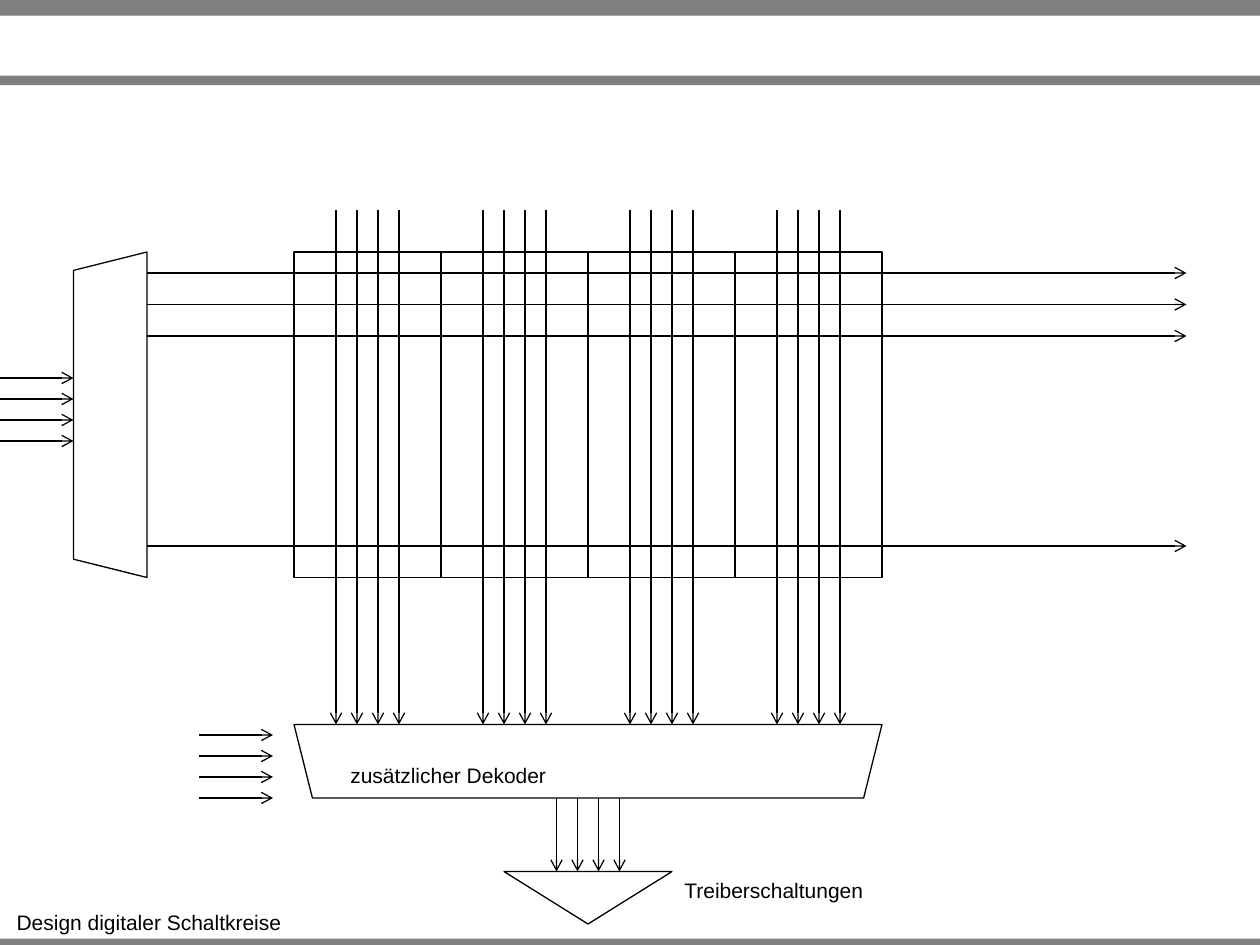
import pptx
import pptx.dml.color
import pptx.enum.shapes
import pptx.enum.text
import pptx.oxml.ns
import pptx.util
from lxml import etree
from pptx.util import Cm

COLORS = {"bar": "808080", "ink": "000000"}
SHAPES = pptx.enum.shapes.MSO_SHAPE
GRID = 2.54 / 12  # centimetres in one grid unit


def units(*values):
    """Turn grid units into lengths."""
    return [Cm(value * GRID) for value in values]


def color(name):
    return pptx.dml.color.RGBColor.from_string(COLORS[name])


class Diagram:
    """Draws on one slide; all positions are in grid units."""

    font_name = "Arial"
    font_size = pptx.util.Pt(12)
    line_width = pptx.util.Pt(0.75)

    def __init__(self, slide):
        self.slide = slide

    def bar(self, top, height):
        shape = self.slide.shapes.add_shape(SHAPES.RECTANGLE, *units(0, top, 120, height))
        shape.shadow.inherit = False
        shape.fill.solid()
        shape.fill.fore_color.rgb = color("bar")
        shape.line.fill.background()

    def outline(self, kind, left, top, width, height, rotation=0):
        shape = self.slide.shapes.add_shape(kind, *units(left, top, width, height))
        shape.shadow.inherit = False
        shape.rotation = rotation
        shape.fill.background()
        shape.line.color.rgb = color("ink")
        shape.line.width = self.line_width

    def arrow(self, x1, y1, x2, y2):
        connector = self.slide.shapes.add_connector(
            pptx.enum.shapes.MSO_CONNECTOR.STRAIGHT, *units(x1, y1, x2, y2))
        connector.line.color.rgb = color("ink")
        connector.line.width = self.line_width
        qn = pptx.oxml.ns.qn
        properties = connector._element.spPr
        etree.SubElement(properties.find(qn("a:ln")), qn("a:tailEnd"), type="arrow")
        etree.SubElement(properties, qn("a:effectLst"))

    def arrows_right(self, left, right, rows):
        for y in rows:
            self.arrow(left, y, right, y)

    def arrows_down(self, top, bottom, columns):
        for x in columns:
            self.arrow(x, top, x, bottom)

    def label(self, text, left, top, width):
        frame = self.slide.shapes.add_textbox(*units(left, top, width, 3.6)).text_frame
        frame.word_wrap = False
        frame.auto_size = pptx.enum.text.MSO_AUTO_SIZE.SHAPE_TO_FIT_TEXT
        paragraph = frame.paragraphs[0]
        paragraph.text = text
        paragraph.alignment = pptx.enum.text.PP_ALIGN.CENTER
        paragraph.font.name = self.font_name
        paragraph.font.size = self.font_size
        paragraph.font.color.rgb = color("ink")


def main():
    presentation = pptx.Presentation()
    presentation.slide_width = Cm(25.4)
    presentation.slide_height = Cm(19.05)
    diagram = Diagram(presentation.slides.add_slide(presentation.slide_layouts[6]))

    for top, height in ((89.4, 0.9), (0, 1.5), (7.2, 0.9)):
        diagram.bar(top, height)
    diagram.label("Design digitaler Schaltkreise", 0.2, 86, 28)

    # Memory blocks with their bit lines, crossed by the word lines
    for left in range(28, 84, 14):
        diagram.outline(SHAPES.RECTANGLE, left, 24, 14, 31)
        diagram.arrows_down(20, 69, range(left + 4, left + 12, 2))
    diagram.arrows_right(14, 113, (26, 29, 32, 52))

    # Row decoder
    diagram.outline(SHAPES.TRAPEZOID, -5, 36, 31, 7, rotation=270)
    diagram.arrows_right(0, 7, range(36, 44, 2))

    # Additional decoder and drivers
    diagram.outline(SHAPES.TRAPEZOID, 28, 69, 56, 7, rotation=180)
    diagram.arrows_right(19, 26, range(70, 78, 2))
    diagram.arrows_down(76, 83, range(53, 61, 2))
    diagram.outline(SHAPES.ISOSCELES_TRIANGLE, 48, 83, 16, 5, rotation=180)
    diagram.label("Treiberschaltungen", 63.7, 83, 20)
    diagram.label("zusätzlicher Dekoder", 31.7, 72, 22)

    presentation.save("out.pptx")


if __name__ == "__main__":
    main()
